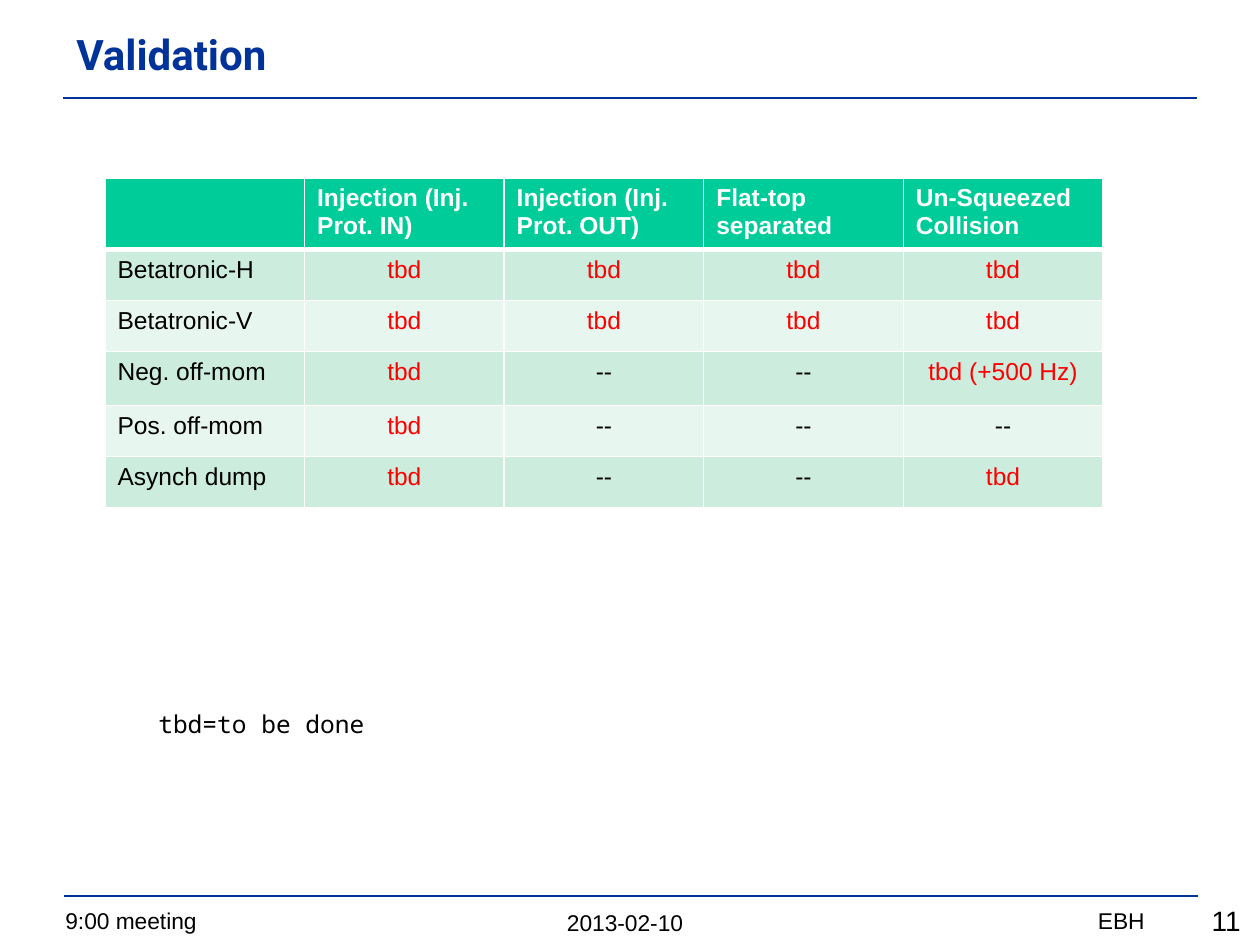
from lxml import etree
from pptx import Presentation
from pptx.dml.color import RGBColor
from pptx.enum.shapes import MSO_CONNECTOR
from pptx.enum.text import MSO_ANCHOR, PP_ALIGN
from pptx.oxml.ns import qn
from pptx.util import Emu, Pt

LEFT, CENTER, RIGHT = PP_ALIGN.LEFT, PP_ALIGN.CENTER, PP_ALIGN.RIGHT
TOP, MIDDLE = MSO_ANCHOR.TOP, MSO_ANCHOR.MIDDLE
STRAIGHT = MSO_CONNECTOR.STRAIGHT
SCALE = 914400 / 126

COLORS = {
    "navy": "003399",
    "black": "000000",
    "white": "FFFFFF",
    "red": "FF0000",
    "green": "00CC99",
    "mint": "CCECDE",
    "pale": "E7F6EF",
}

HEAD = ["", "Injection (Inj. Prot. IN)", "Injection (Inj. Prot. OUT)",
        "Flat-top separated", "Un-Squeezed Collision"]
CHECKS = [
    ["Betatronic-H", "tbd", "tbd", "tbd", "tbd"],
    ["Betatronic-V", "tbd", "tbd", "tbd", "tbd"],
    ["Neg. off-mom", "tbd", "--", "--", "tbd (+500 Hz)"],
    ["Pos. off-mom", "tbd", "--", "--", "--"],
    ["Asynch dump", "tbd", "--", "--", "tbd"],
]
HEIGHTS = [67, 51, 51, 54, 51, 51]


def px(num):
    return Emu(round(num * SCALE))


def color(name):
    return RGBColor.from_string(COLORS[name])


def write(frame, text, size=14, font="Arial", ink="black", bold=False,
          align=LEFT):
    """Fill a text frame with one formatted paragraph."""
    para = frame.paragraphs[0]
    para.alignment = align
    para.font.size = Pt(size)
    if not text:
        return
    run = para.add_run()
    run.text = text
    run.font.size = Pt(size)
    run.font.name = font
    run.font.bold = bold
    run.font.color.rgb = color(ink)


def add_text(slide, text, box, anchor=TOP, **style):
    frame = slide.shapes.add_textbox(*map(px, box)).text_frame
    frame.word_wrap = True
    frame.vertical_anchor = anchor
    write(frame, text, **style)


def add_rule(slide, left, top, width):
    rule = slide.shapes.add_connector(
        STRAIGHT, px(left), px(top), px(left + width), px(top))
    rule.line.color.rgb = color("navy")
    rule.line.width = Pt(1.5)
    etree.SubElement(rule.element.spPr, qn("a:effectLst"))


def add_edges(cell, **widths):
    """Draw white cell borders; widths in points are keyed L, R, T, B."""
    props = cell._tc.get_or_add_tcPr()
    for spot, (side, width) in enumerate(widths.items()):
        edge = etree.Element(qn(f"a:ln{side}"), w=str(Pt(width)))
        fill = etree.SubElement(edge, qn("a:solidFill"))
        etree.SubElement(fill, qn("a:srgbClr"), val=COLORS["white"])
        props.insert(spot, edge)


def cell_style(row, col, text):
    if row == 0:
        return {"ink": "white", "bold": True}
    if col == 0:
        return {}
    return {"ink": "red" if text.startswith("tbd") else "black",
            "align": CENTER}


def add_grid(slide, left, top, width):
    rows = [HEAD] + CHECKS
    grid = slide.shapes.add_table(
        len(rows), len(HEAD), px(left), px(top), px(width),
        px(sum(HEIGHTS))).table
    for row, (texts, height) in enumerate(zip(rows, HEIGHTS)):
        grid.rows[row].height = px(height)
        back = "green" if row == 0 else "mint" if row % 2 else "pale"
        for col, text in enumerate(texts):
            cell = grid.cell(row, col)
            cell.fill.solid()
            cell.fill.fore_color.rgb = color(back)
            add_edges(cell, L=1, R=1, T=3 if row == 1 else 1,
                      B=3 if row == 0 else 1)
            write(cell.text_frame, text, **cell_style(row, col, text))


def main():
    deck = Presentation()
    deck.slide_width, deck.slide_height = px(1260), px(945)
    slide = deck.slides.add_slide(deck.slide_layouts[6])

    add_text(slide, "2013-02-10", (305, 903, 640, 40), size=13, align=CENTER)
    add_text(slide, "9:00 meeting", (53, 901, 466, 40), size=13)
    add_text(slide, "EBH", (789, 901, 368, 40), size=13, align=RIGHT)
    add_rule(slide, 64, 896, 1134)
    add_text(slide, "11", (1108, 897, 145, 47), size=16, align=RIGHT)

    add_rule(slide, 63, 98, 1134)
    add_text(slide, "Validation", (64, 11, 1133, 86), anchor=MIDDLE,
             size=24, font="Roboto", ink="navy", bold=True)
    add_grid(slide, 105, 178, 998)
    add_text(slide, "tbd=to be done", (146, 703, 615, 50),
             font="Noto Sans Mono")
    deck.save("out.pptx")


if __name__ == "__main__":
    main()
